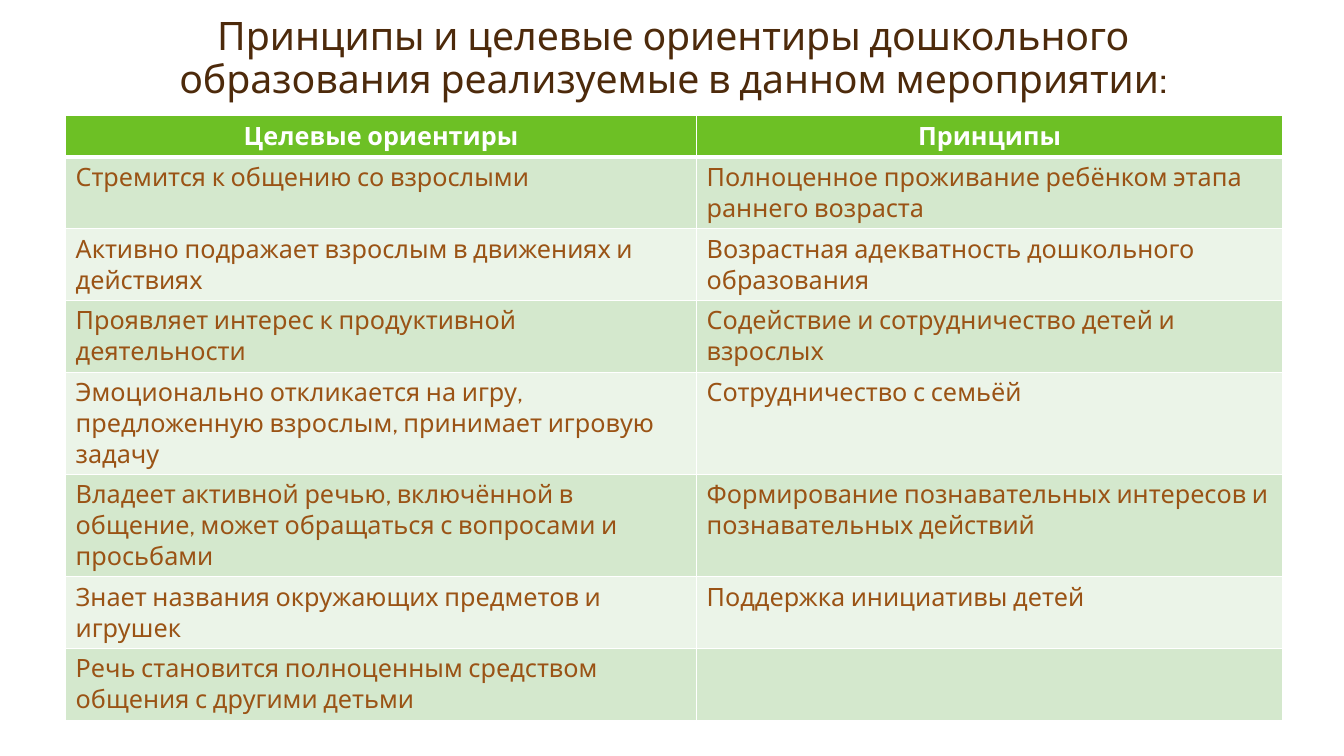
from lxml.etree import SubElement
from pptx import Presentation
from pptx.dml.color import RGBColor
from pptx.enum.text import MSO_ANCHOR, MSO_AUTO_SIZE, PP_ALIGN
from pptx.oxml.ns import qn
from pptx.util import Inches, Pt

WHITE = RGBColor(0xFF, 0xFF, 0xFF)
GREEN = RGBColor(0x6D, 0xC0, 0x25)
LIGHT_GREEN = RGBColor(0xD4, 0xE8, 0xCD)
PALE_GREEN = RGBColor(0xEB, 0xF4, 0xE8)
DARK_BROWN = RGBColor(0x4D, 0x2A, 0x0B)
BROWN = RGBColor(0x9A, 0x53, 0x15)

TITLE = "Принципы и целевые ориентиры дошкольного образования реализуемые в данном мероприятии:"
ROWS = [
    ("Целевые ориентиры", "Принципы"),
    ("Стремится к общению со взрослыми",
     "Полноценное проживание ребёнком этапа раннего возраста"),
    ("Активно подражает взрослым в движениях и действиях",
     "Возрастная адекватность дошкольного образования"),
    ("Проявляет интерес к продуктивной деятельности",
     "Содействие и сотрудничество детей и взрослых"),
    ("Эмоционально откликается на игру, предложенную взрослым, принимает игровую задачу",
     "Сотрудничество с семьёй"),
    ("Владеет активной речью, включённой в общение, может обращаться с вопросами и просьбами",
     "Формирование познавательных интересов и познавательных действий"),
    ("Знает названия окружающих предметов и игрушек",
     "Поддержка инициативы детей"),
    ("Речь становится полноценным средством общения с другими детьми", ""),
]


class SlideBuilder:
    """Draws on one slide; lengths are percentages of its width and height."""

    font = "Cabin"
    title_size = 28
    table_size = 18

    def __init__(self, deck):
        self.deck = deck
        self.page = deck.slides.add_slide(deck.slide_layouts[5])

    def across(self, share):
        return round(self.deck.slide_width * share / 100)

    def down(self, share):
        return round(self.deck.slide_height * share / 100)

    def span(self, paragraph, text, size, color, bold=False):
        span = paragraph.add_run()
        span.text = text
        span.font.name = self.font
        span.font.size = Pt(size)
        span.font.bold = bold
        span.font.color.rgb = color

    def title(self, text, left, top, width, height):
        box = self.page.shapes.title
        box.left, box.top = self.across(left), self.down(top)
        box.width, box.height = self.across(width), self.down(height)
        frame = box.text_frame
        frame.word_wrap = True
        frame.auto_size = MSO_AUTO_SIZE.NONE
        frame.vertical_anchor = MSO_ANCHOR.BOTTOM
        paragraph = frame.paragraphs[0]
        paragraph.alignment = PP_ALIGN.CENTER
        paragraph.line_spacing = 0.9
        self.span(paragraph, text, self.title_size, DARK_BROWN)

    def borders(self, cell, bottom, top):
        """Adds white cell borders; must run before the cell is filled."""
        properties = cell._tc.get_or_add_tcPr()
        for side, width in (("L", 1), ("R", 1), ("T", top), ("B", bottom)):
            line = SubElement(properties, qn(f"a:ln{side}"), w=str(Pt(width)))
            fill = SubElement(line, qn("a:solidFill"))
            SubElement(fill, qn("a:srgbClr"), val=str(WHITE))

    def cell(self, cell, text, row):
        header = row == 0
        self.borders(cell, bottom=3 if header else 1, top=3 if row == 1 else 1)
        cell.fill.solid()
        cell.fill.fore_color.rgb = GREEN if header else (PALE_GREEN, LIGHT_GREEN)[row % 2]
        paragraph = cell.text_frame.paragraphs[0]
        paragraph.alignment = PP_ALIGN.CENTER if header else PP_ALIGN.LEFT
        if text:
            self.span(paragraph, text, self.table_size, WHITE if header else BROWN, header)

    def table(self, rows, left, top, widths, row_height):
        """Rows start at row_height and grow with their wrapped text."""
        table = self.page.shapes.add_table(
            len(rows), len(widths), self.across(left), self.down(top),
            self.across(sum(widths)), self.down(row_height * len(rows))).table
        for column, width in zip(table.columns, widths):
            column.width = self.across(width)
        for row, texts in enumerate(rows):
            for column, text in enumerate(texts):
                self.cell(table.cell(row, column), text, row)


def main():
    deck = Presentation()
    deck.slide_width, deck.slide_height = Inches(13.33), Inches(7.5)
    builder = SlideBuilder(deck)
    builder.title(TITLE, left=8.85, top=0, width=82.5, height=14.13)
    builder.table(ROWS, left=4.88, top=15.33, widths=(46.95, 43.6), row_height=5.47)
    deck.save("out.pptx")


if __name__ == "__main__":
    main()
